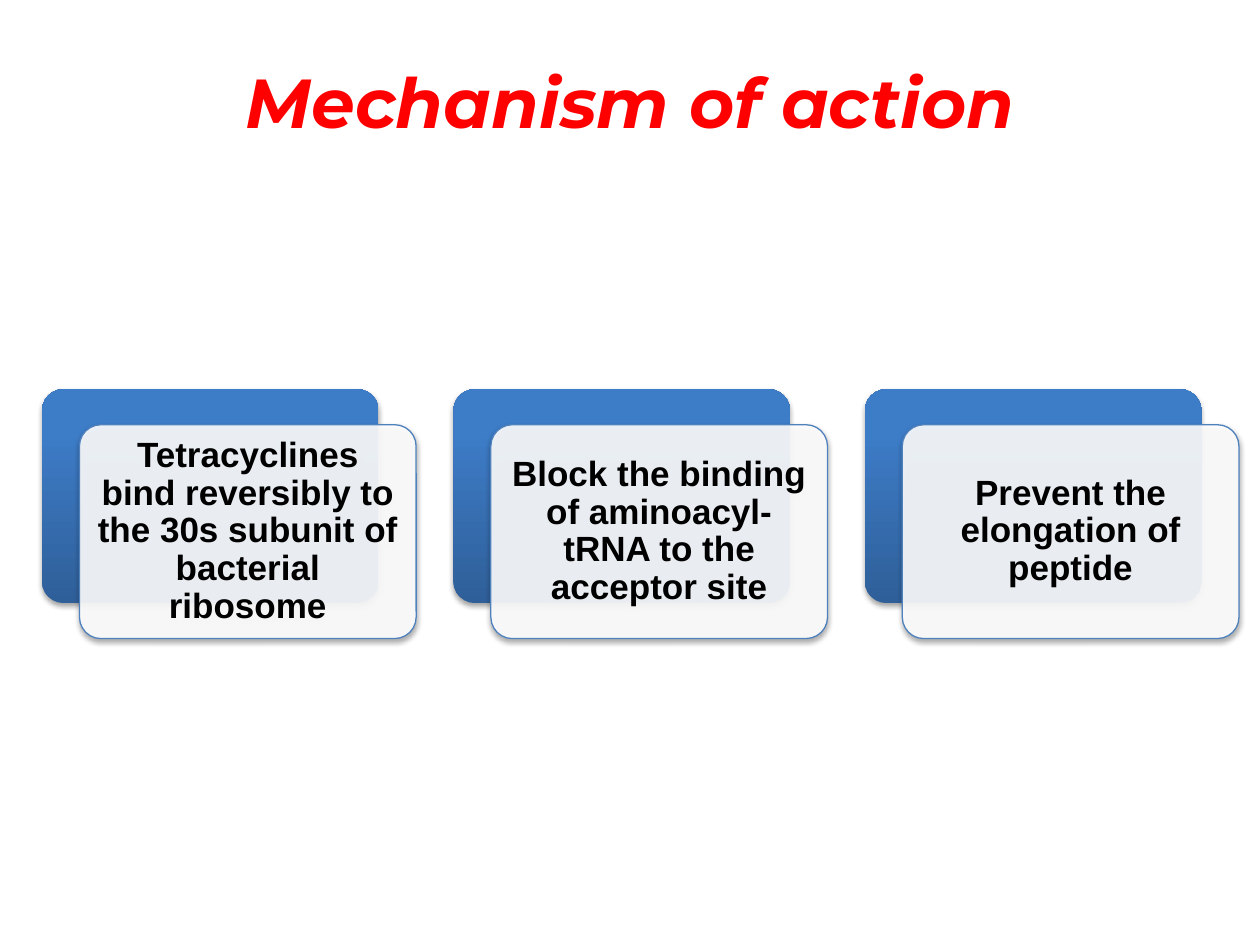
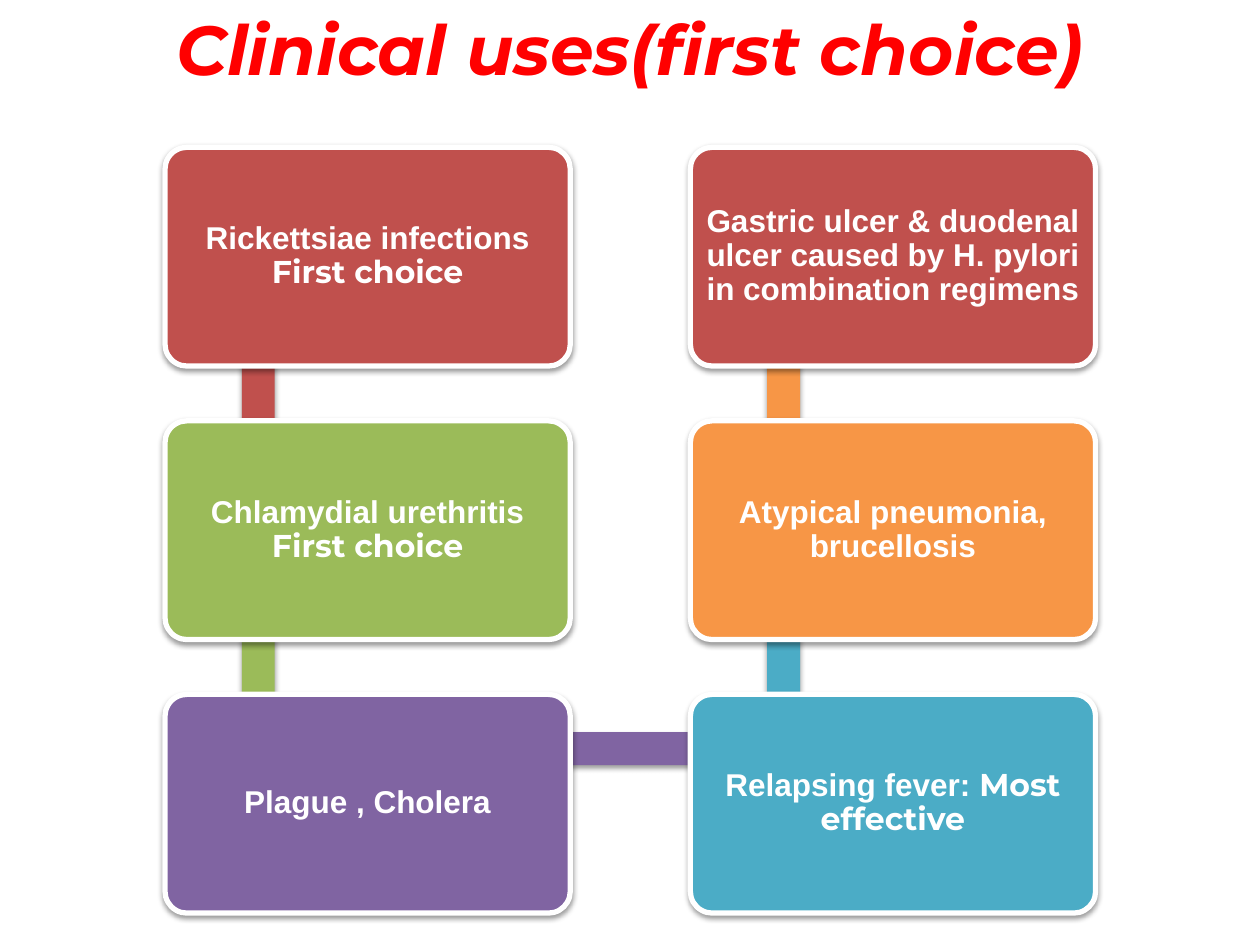
"""Build two slides on how tetracyclines act and where they are used."""
import dataclasses

import lxml.etree
import pptx
import pptx.dml.color
import pptx.enum.shapes
import pptx.enum.text
import pptx.oxml.ns
import pptx.util

Pt = pptx.util.Pt
Kind = pptx.enum.shapes.MSO_SHAPE
Anchor = pptx.enum.text.MSO_ANCHOR
Align = pptx.enum.text.PP_ALIGN


@dataclasses.dataclass(frozen=True)
class Theme:
    """Hold the colours, fonts and type sizes."""
    head: str = "Montserrat"
    body: str = "Arial"
    title: float = 39.6
    step: float = 20
    use: float = 18
    red: str = "FF0000"
    black: str = "000000"
    white: str = "FFFFFF"
    edge: str = "4F81BD"
    deep: str = "2F5F99"
    light: str = "3D7CC7"
    brick: str = "C0504D"
    green: str = "9BBB59"
    plum: str = "8064A2"
    teal: str = "4BACC6"
    amber: str = "F79646"


THEME = Theme()

STEPS = [
    "Tetracyclines bind reversibly to the 30s subunit of bacterial ribosome",
    "Block the binding of aminoacyl-tRNA to the acceptor site",
    "Prevent the elongation of peptide",
]

USES = [
    (0, 0, THEME.brick, "Rickettsiae infections ", "First choice"),
    (0, 1, THEME.green, "Chlamydial urethritis ", "First choice"),
    (0, 2, THEME.plum, "Plague , Cholera", ""),
    (1, 2, THEME.teal, "Relapsing fever: ", "Most effective"),
    (1, 1, THEME.amber, "Atypical pneumonia, brucellosis", ""),
    (1, 0, THEME.brick, "Gastric ulcer & duodenal ulcer caused by H. pylori "
                        "in combination regimens", ""),
]


def rgb(code):
    """Turn a hex code into a colour."""
    return pptx.dml.color.RGBColor.from_string(code)


def add_node(parent, tag, **attrs):
    """Append a drawing element with the given attributes."""
    node = lxml.etree.SubElement(parent, pptx.oxml.ns.qn(tag))
    for key, value in attrs.items():
        node.set(key, str(value))
    return node


def set_font(run, face, size, color):
    """Give a run its bold face, size and colour."""
    run.font.name = face
    run.font.size = Pt(size)
    run.font.bold = True
    run.font.color.rgb = rgb(color)


def add_slide(deck, text, left, top, width, height):
    """Add a slide with its title placed and styled."""
    slide = deck.slides.add_slide(deck.slide_layouts[5])
    title = slide.shapes.title
    title.left, title.top = Pt(left), Pt(top)
    title.width, title.height = Pt(width), Pt(height)
    frame = title.text_frame
    frame.text = text
    frame.auto_size = pptx.enum.text.MSO_AUTO_SIZE.NONE
    frame.vertical_anchor = Anchor.TOP
    para = frame.paragraphs[0]
    para.alignment = Align.CENTER
    set_font(para.runs[0], THEME.head, THEME.title, THEME.red)
    para.runs[0].font.italic = True
    return slide


def add_block(slide, kind, box, color=None, alpha=36, drop=1.6):
    """Add a block with a soft shadow and no outline."""
    block = slide.shapes.add_shape(kind, *map(Pt, box))
    if kind == Kind.ROUNDED_RECTANGLE:
        block.adjustments[0] = 0.1
    if color:
        block.fill.solid()
        block.fill.fore_color.rgb = rgb(color)
    block.line.fill.background()
    block.shadow.inherit = False
    effects = block._element.spPr.find(pptx.oxml.ns.qn("a:effectLst"))
    shade = add_node(effects, "a:outerShdw", blurRad=Pt(3.1), dist=Pt(drop),
                     dir=5400000, rotWithShape=0)
    tint = add_node(shade, "a:srgbClr", val=THEME.black)
    add_node(tint, "a:alpha", val=alpha * 1000)
    return block


def set_edge(block, color, width):
    """Outline a block."""
    block.line.color.rgb = rgb(color)
    block.line.width = Pt(width)


def set_label(block, text, size, color, inset, extra=""):
    """Centre bold text in a block, with an extra part in the title face."""
    frame = block.text_frame
    frame.text = text
    frame.word_wrap = True
    frame.vertical_anchor = Anchor.MIDDLE
    frame.margin_left = frame.margin_right = Pt(inset)
    frame.margin_top = frame.margin_bottom = Pt(inset)
    para = frame.paragraphs[0]
    para.alignment = Align.CENTER
    para.line_spacing = 0.9
    set_font(para.runs[0], THEME.body, size, color)
    if extra:
        run = para.add_run()
        run.text = extra
        set_font(run, THEME.head, size, color)


def add_step(slide, left, top, text):
    """Add a blue card with a pale text card laid over it."""
    width, height = 192.4, 122.2
    back = add_block(slide, Kind.ROUNDED_RECTANGLE,
                     (left, top, width, height), alpha=35, drop=1.8)
    back.fill.gradient()
    back.fill.gradient_angle = 90
    for stop, place, color in zip(back.fill.gradient_stops, (0, 0.8),
                                  (THEME.deep, THEME.light)):
        stop.position = place
        stop.color.rgb = rgb(color)
    front = add_block(slide, Kind.ROUNDED_RECTANGLE,
                      (left + 21.4, top + 20.3, width, height),
                      THEME.white, 35, 1.8)
    tint = front._element.spPr.find(".//" + pptx.oxml.ns.qn("a:srgbClr"))
    add_node(tint, "a:alpha", val=90000)
    set_edge(front, THEME.edge, 0.75)
    set_label(front, text, THEME.step, THEME.black, 5.5)


def add_snake(slide, uses):
    """Add cards down one column and up the next, joined by bars."""
    thick = 18.8
    spots = [(94.3 + 300.2 * col, 84.2 + 156.3 * row)
             for col, row, *_ in uses]
    for index, (left, top) in enumerate(spots):
        color, text, extra = uses[index][2:]
        if index + 1 < len(spots):
            after, below = spots[index + 1]
            if after > left:
                bar = (left + 54, top + 21.6, after - left, thick)
            else:
                bar = (left + 43.9, min(top, below) + 31, thick,
                       abs(below - top))
            add_block(slide, Kind.RECTANGLE, bar, color, 38)
        card = add_block(slide, Kind.ROUNDED_RECTANGLE,
                         (left, top, 231.6, 125), color, 38)
        set_edge(card, THEME.white, 3)
        set_label(card, text, THEME.use, THEME.white, 5, extra)


def main():
    """Build and save the deck."""
    deck = pptx.Presentation()
    deck.slide_width, deck.slide_height = Pt(720), Pt(540)
    slide = add_slide(deck, "Mechanism of action", 30, 30, 660, 72)
    for index, text in enumerate(STEPS):
        add_step(slide, 24 + 235.1 * index, 222.4, text)
    slide = add_slide(deck, "Clinical uses(first choice)", 36, 0, 648, 84)
    add_snake(slide, USES)
    deck.save("out.pptx")


if __name__ == "__main__":
    main()
